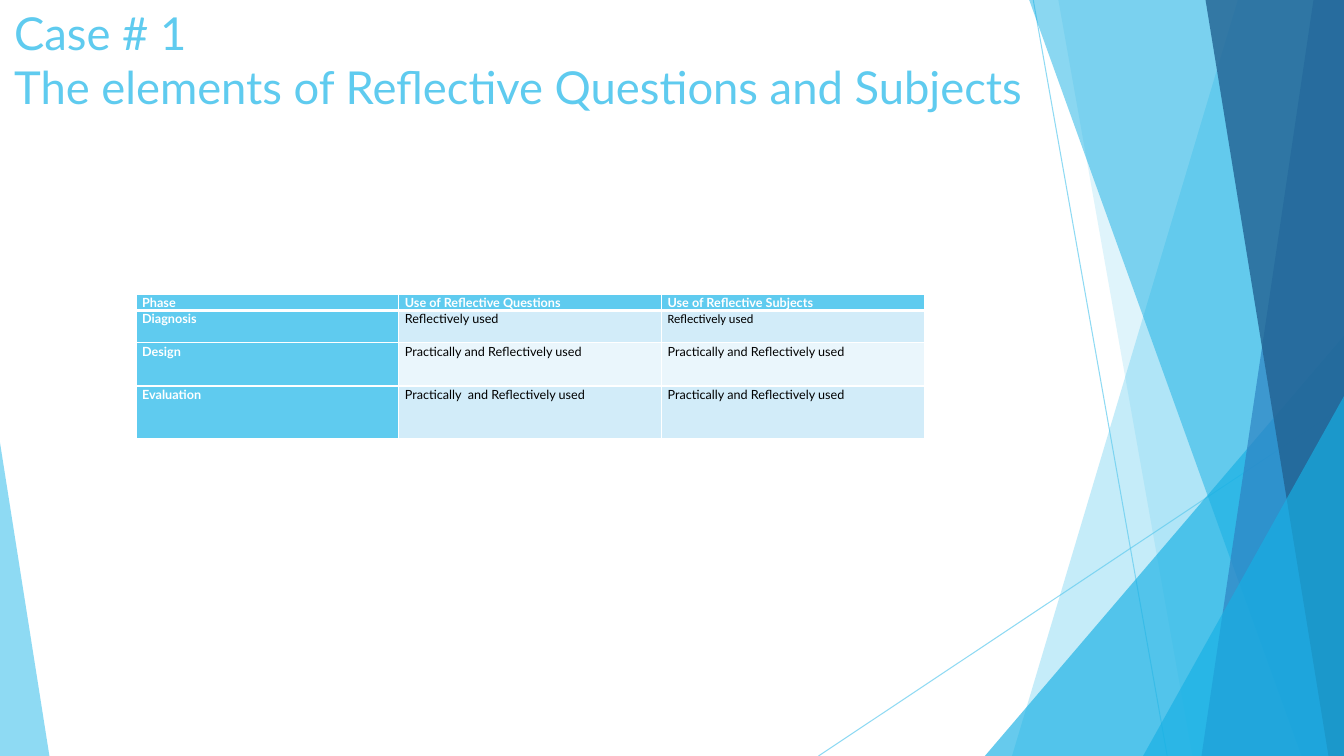
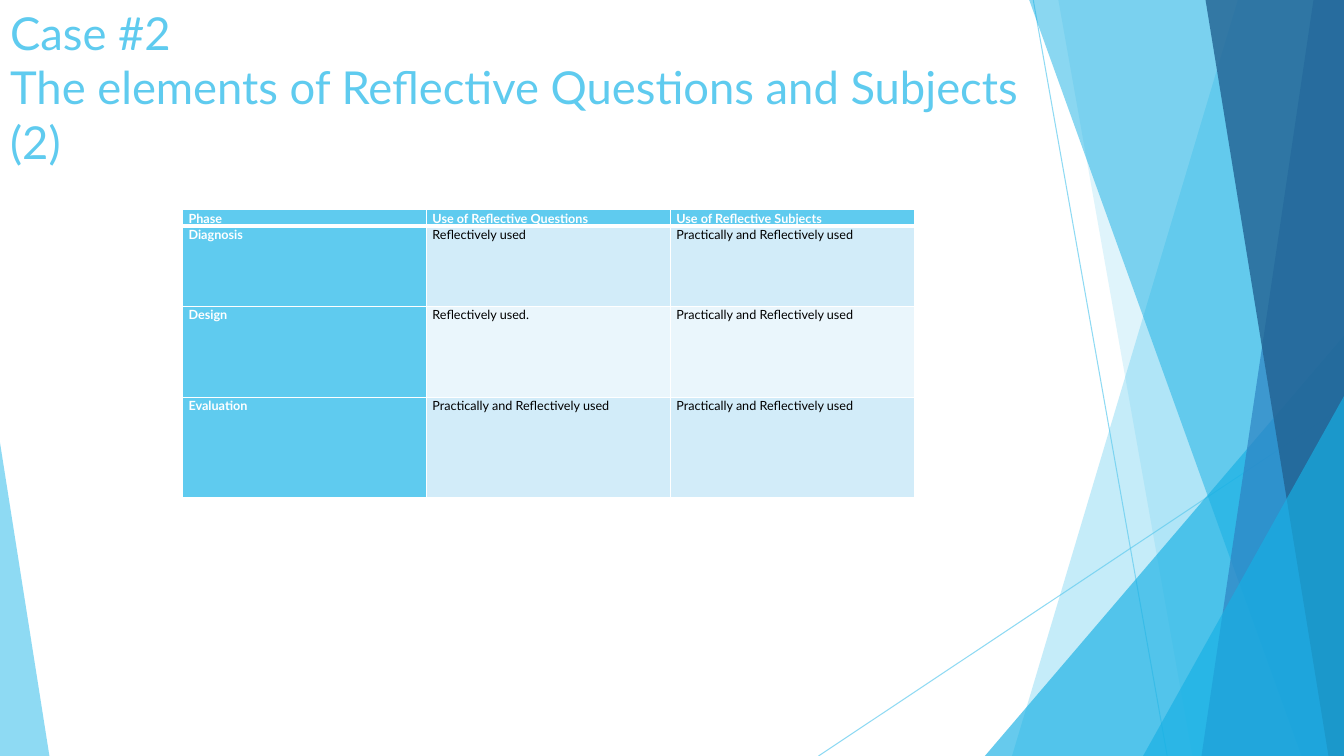
from copy import deepcopy
from dataclasses import dataclass

from lxml.etree import SubElement
from pptx import Presentation
from pptx.dml.color import RGBColor as Rgb
from pptx.enum.shapes import MSO_CONNECTOR as Link, MSO_SHAPE as Form
from pptx.enum.text import MSO_ANCHOR as Anchor, MSO_AUTO_SIZE as Fit, PP_ALIGN as Align
from pptx.oxml.ns import qn
from pptx.util import Inches, Pt

WIDE, HIGH = Inches(13.333), Inches(7.5)
FONT = "Lato"
HUES = {
    "sky": "5FCBEF", "cyan": "17B0E4", "blue": "2E83C3", "navy": "226292",
    "pale": "D2ECF9", "mist": "EAF6FC", "white": "FFFFFF", "black": "000000",
}


# All lengths below are percent of the slide's width or height.
@dataclass(frozen=True)
class Ray:
    x1: float
    y1: float
    x2: float
    y2: float


@dataclass(frozen=True)
class Band:
    """A strip from a slanted left edge to the right side of the slide."""
    top: float
    foot: float
    hue: str
    alpha: int


@dataclass(frozen=True)
class Peak:
    """A triangle standing on the bottom edge; tip is 0 (left) or 1 (right)."""
    left: float
    top: float
    width: float
    tip: int
    hue: str
    alpha: int


@dataclass(frozen=True)
class Case:
    title: str
    left: float
    width: float
    grid: tuple[float, float, float]
    rows: tuple[float, ...]
    body: tuple[tuple[str, str, str], ...]
    odd: tuple[tuple[int, int], ...] = ()


DECOR = (
    Ray(76.88, 0, 86.85, 100),
    Ray(100, 53.73, 60.9, 100),
    Band(92.1, 75.3, "sky", 36),
    Band(78.75, 88.73, "sky", 20),
    Peak(73.28, 44.4, 26.72, 1, "cyan", 66),
    Band(76.58, 96.83, "cyan", 50),
    Band(97.73, 89.4, "blue", 70),
    Band(89.7, 98.85, "navy", 80),
    Peak(85.05, 52.4, 14.95, 1, "cyan", 66),
    Peak(0, 58.53, 3.68, 0, "sky", 70),
)
HEAD = ("Phase", "Use of Reflective Questions", "Use of Reflective Subjects")
BOTH = "Practically and Reflectively used"
CASES = (
    Case("Case # 1\vThe elements of Reflective Questions and Subjects",
         0.3, 81, (10.13, 38.93, 58.65), (2.13, 4.27, 5.73, 6.93),
         (("Diagnosis", "Reflectively used", "Reflectively used"),
          ("Design", BOTH, BOTH),
          ("Evaluation", "Practically  and Reflectively used", BOTH)),
         odd=((1, 2),)),
    Case("Case #2\vThe elements of Reflective Questions and Subjects (2)",
         0, 79.73, (13.58, 27.73, 54.45), (2.13, 10.67, 12, 13.33),
         (("Diagnosis", "Reflectively used", BOTH),
          ("Design", "Reflectively used.", BOTH),
          ("Evaluation", BOTH, BOTH))),
)


def px(share: float) -> int:
    return round(WIDE * share / 100)


def py(share: float) -> int:
    return round(HIGH * share / 100)


def tone(name: str) -> Rgb:
    return Rgb.from_string(HUES[name])


def fade(shape, alpha: int) -> None:
    for node in shape.element.spPr.iter(qn("a:srgbClr")):
        SubElement(node, qn("a:alpha")).set("val", str(alpha * 1000))


def write(frame, text: str, *, size: float, hue: str, font: str = FONT,
          bold: bool = False, space: float = 1.0) -> None:
    frame.word_wrap = True
    frame.text = text
    para = frame.paragraphs[0]
    para.alignment = Align.LEFT
    para.line_spacing = space
    for run in para.runs:
        face = run.font
        face.name, face.size, face.bold = font, Pt(size), bold
        face.color.rgb = tone(hue)
    # Line breaks take the format of the text so that line heights match.
    for gap in frame.paragraphs[0].runs[0].font and frame._txBody.iter(qn("a:br")):
        gap.append(deepcopy(gap.getprevious().find(qn("a:rPr"))))


def draw(shapes, item: Ray | Band | Peak):
    if isinstance(item, Ray):
        line = shapes.add_connector(Link.STRAIGHT, px(item.x1), py(item.y1),
                                    px(item.x2), py(item.y2))
        line.line.color.rgb = tone("sky")
        line.line.width = Pt(0.75)
        SubElement(line.element.spPr, qn("a:effectLst"))
        fade(line, 70)
        return line
    if isinstance(item, Band):
        pen = shapes.build_freeform(px(item.top), 0)
        pen.add_line_segments([(WIDE, 0), (WIDE, HIGH), (px(item.foot), HIGH)])
        shape = pen.convert_to_shape()
    else:
        shape = shapes.add_shape(Form.ISOSCELES_TRIANGLE, px(item.left), py(item.top),
                                 px(item.width), HIGH - py(item.top))
        shape.adjustments[0] = item.tip
    shape.shadow.inherit = False
    shape.fill.solid()
    shape.fill.fore_color.rgb = tone(item.hue)
    shape.line.fill.background()
    fade(shape, item.alpha)
    return shape


def adorn(layout, slide) -> None:
    """Draw the decor on a slide, then move it behind all else on its layout."""
    for rank, item in enumerate(DECOR):
        node = draw(slide.shapes, item).element
        next(node.iter(qn("p:cNvPr"))).set("id", str(100 + rank))
        layout.shapes.element.insert(2 + rank, node)


def edge(cell, foot: float) -> None:
    """Give a cell white borders, the bottom one foot points wide."""
    props = cell._tc.get_or_add_tcPr()
    for rank, side in enumerate(("lnL", "lnR", "lnT", "lnB")):
        line = SubElement(props, qn(f"a:{side}"))
        line.set("w", str(Pt(foot if side == "lnB" else 1)))
        paint = SubElement(line, qn("a:solidFill"))
        SubElement(paint, qn("a:srgbClr")).set("val", HUES["white"])
        props.insert(rank, line)


def chart(slide, case: Case) -> None:
    """Lay out the table of phases."""
    left, top, width = case.grid
    table = slide.shapes.add_table(len(case.rows), len(HEAD), px(left), py(top),
                                   px(width), py(sum(case.rows))).table
    for col in table.columns:
        col.width = px(width / len(HEAD))
    for r, texts in enumerate((HEAD, *case.body)):
        table.rows[r].height = py(case.rows[r])
        for c, text in enumerate(texts):
            cell = table.cell(r, c)
            key = r == 0 or c == 0
            cell.margin_left = cell.margin_right = Inches(0.06)
            cell.margin_top = cell.margin_bottom = 0
            cell.vertical_anchor = Anchor.TOP
            cell.fill.solid()
            cell.fill.fore_color.rgb = tone("sky" if key else "pale" if r % 2 else "mist")
            write(cell.text_frame, text, size=9, bold=key, space=1.07,
                  hue="white" if key else "black",
                  font="Calibri" if (r, c) in case.odd else FONT)
            edge(cell, 1 if r else 3)


def build(slide, case: Case) -> None:
    title = slide.shapes.title
    title.left, title.top = px(case.left), 0
    title.width, title.height = px(case.width), py(19.2)
    frame = title.text_frame
    frame.auto_size = Fit.NONE
    frame.vertical_anchor = Anchor.TOP
    write(frame, case.title, size=32.4, hue="sky")
    chart(slide, case)


def main() -> None:
    deck = Presentation()
    deck.slide_width, deck.slide_height = WIDE, HIGH
    layout = deck.slide_layouts[5]
    slides = [deck.slides.add_slide(layout) for _ in CASES]
    adorn(layout, slides[0])
    for slide, case in zip(slides, CASES):
        build(slide, case)
    deck.save("out.pptx")


if __name__ == "__main__":
    main()
